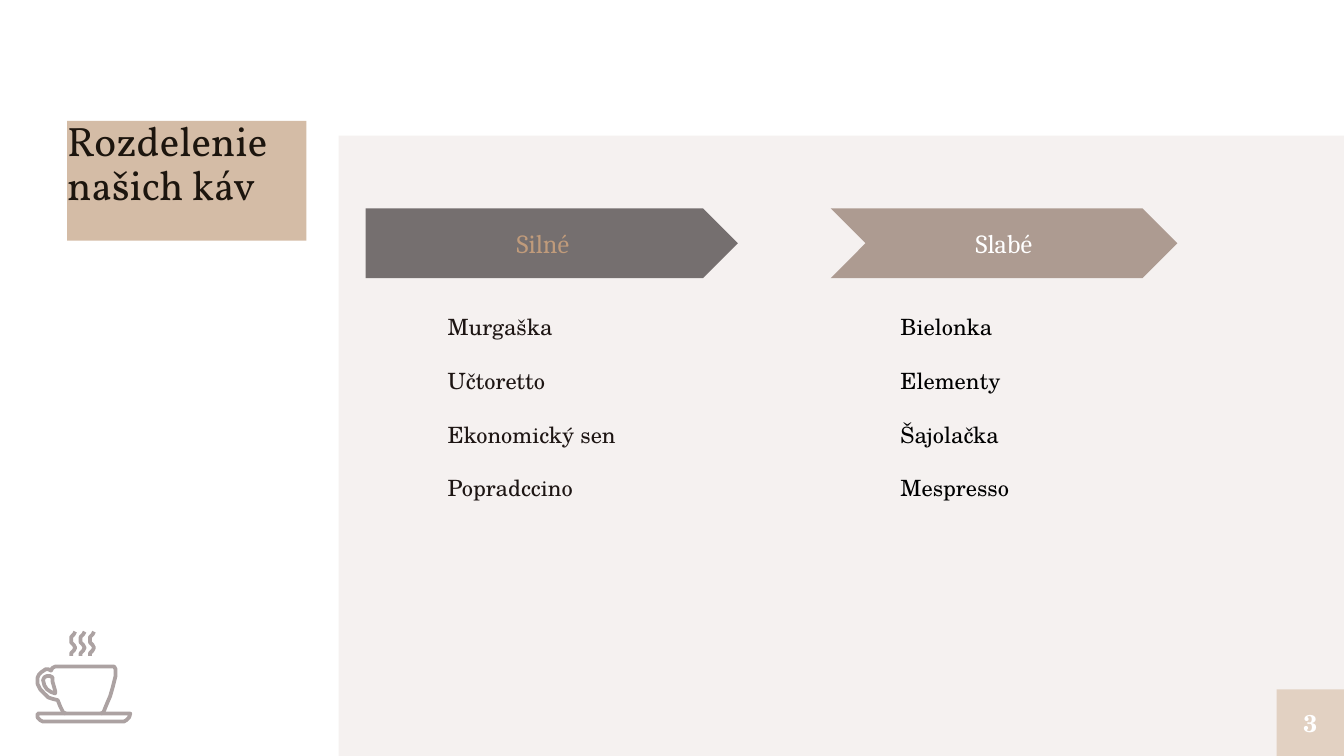
from pptx import Presentation
from pptx.dml.color import RGBColor
from pptx.enum.shapes import MSO_SHAPE
from pptx.enum.text import MSO_ANCHOR, MSO_AUTO_SIZE, PP_ALIGN
from pptx.oxml.ns import qn
from pptx.util import Inches, Pt
from lxml import etree

RECT, PENTAGON, CHEVRON = MSO_SHAPE.RECTANGLE, MSO_SHAPE.PENTAGON, MSO_SHAPE.CHEVRON
TOP, MIDDLE = MSO_ANCHOR.TOP, MSO_ANCHOR.MIDDLE
LEFT, CENTER = PP_ALIGN.LEFT, PP_ALIGN.CENTER
NO_FIT = MSO_AUTO_SIZE.NONE

WHITE = RGBColor(0xFF, 0xFF, 0xFF)
BLACK = RGBColor(0x00, 0x00, 0x00)
INK = RGBColor(0x1C, 0x15, 0x0E)
BROWN_INK = RGBColor(0x1D, 0x15, 0x13)
PANEL = RGBColor(0xF5, 0xF1, 0xF0)
TAN = RGBColor(0xD4, 0xBC, 0xA6)
SAND = RGBColor(0xE2, 0xD1, 0xC2)
GREY = RGBColor(0x75, 0x6F, 0x6F)
TAUPE = RGBColor(0xAD, 0x9B, 0x91)
CARAMEL = RGBColor(0xC0, 0x9B, 0x7B)
OUTLINE = RGBColor(0xAC, 0xA2, 0xA2)

TITLE_FONT, LABEL_FONT, BODY_FONT = "Vollkorn", "Cambria", "TeX Gyre Schola"

CUP = [(75, 531), (77, 530), (79, 525), (82, 518), (84, 511), (86, 503), (86, 498),
       (85, 496), (84, 496), (41, 496), (39, 497), (38, 499), (36, 498), (34, 498),
       (31, 500), (29, 502), (28, 504), (28, 509), (30, 513), (33, 516), (36, 519),
       (39, 520), (43, 521), (45, 526), (47, 530), (49, 531)]
HANDLE = [(32, 506), (33, 504), (35, 503), (37, 503), (39, 504), (39, 507), (41, 514),
          (41, 516), (38, 515), (35, 513), (33, 510), (32, 506)]
SAUCER = [(28, 531), (97, 531), (96, 534), (94, 536), (92, 537), (32, 537),
          (30, 536), (28, 534), (28, 531)]
STEAM = [(3, 470), (2, 472), (0, 474), (0, 478), (2, 480), (3, 482), (2, 484),
         (0, 486), (0, 488)]


class SlideBuilder:
    """Draws styled elements on the current slide."""

    def __init__(self, prs):
        self.s = prs.slides.add_slide(prs.slide_layouts[3])

    def font(self, p, name, size, color, bold=False):
        p.font.name, p.font.size, p.font.bold = name, Pt(size), bold
        p.font.color.rgb = color

    def frame(self, sp, box, inset, anchor):
        sp.left, sp.top, sp.width, sp.height = (Inches(v) for v in box)
        tf = sp.text_frame
        tf.word_wrap, tf.auto_size, tf.vertical_anchor = True, NO_FIT, anchor
        tf.margin_left = tf.margin_top = tf.margin_right = tf.margin_bottom = Inches(inset)
        return tf

    def title(self, text, box):
        sp = self.s.shapes.title
        sp.fill.solid()
        sp.fill.fore_color.rgb = TAN
        tf = self.frame(sp, box, 0, TOP)
        tf.text = text
        p = tf.paragraphs[0]
        p.alignment, p.line_spacing = LEFT, 0.9
        self.font(p, TITLE_FONT, 22, INK)

    def items(self, idx, lines, box, color):
        tf = self.frame(self.s.placeholders[idx], box, 0.1, TOP)
        tf.text = "\n".join(lines)
        for p in tf.paragraphs:
            p.alignment, p.space_before, p.space_after = LEFT, Pt(0), Pt(14.4)
            self.font(p, BODY_FONT, 12, color)
            pPr = p._p.get_or_add_pPr()
            pPr.set("marL", "0")
            pPr.set("indent", "0")
            pPr.insert_element_before(etree.Element(qn("a:buNone")), "a:tabLst", "a:defRPr")

    def block(self, kind, box, fill):
        sp = self.s.shapes.add_shape(kind, *(Inches(v) for v in box))
        sp.shadow.inherit = False
        sp.fill.solid()
        sp.fill.fore_color.rgb = fill
        sp.line.fill.background()
        return sp

    def panel(self, box):
        sp = self.block(RECT, box, PANEL)
        self.s.shapes._spTree.insert(2, sp._element)

    def label(self, kind, text, box, fill, font, size, color, inset=0.1, bold=False):
        tf = self.frame(self.block(kind, box, fill), box, inset, MIDDLE)
        tf.text = text
        p = tf.paragraphs[0]
        p.alignment = CENTER
        self.font(p, font, size, color, bold)

    def stroke(self, points, close=False):
        fb = self.s.shapes.build_freeform(*points[0], scale=Inches(0.01))
        fb.add_line_segments(points[1:], close=close)
        sp = fb.convert_to_shape()
        sp.shadow.inherit = False
        sp.fill.background()
        sp.line.color.rgb, sp.line.width = OUTLINE, Pt(2)
        etree.SubElement(sp.line._get_or_add_ln(), qn("a:round"))


def main():
    prs = Presentation()
    prs.slide_width, prs.slide_height = Inches(10), Inches(10) * 9 // 16
    b = SlideBuilder(prs)

    b.panel((2.52, 1.01, 7.48, 4.62))
    b.title("Rozdelenie našich káv", (0.5, 0.9, 1.78, 0.89))
    b.label(RECT, "3", (9.5, 5.13, 0.5, 0.5), SAND, BODY_FONT, 13, WHITE, 0, True)

    b.label(PENTAGON, "Silné", (2.72, 1.55, 2.77, 0.52), GREY, LABEL_FONT, 14, CARAMEL)
    b.items(1, ["Murgaška", "Učtoretto", "Ekonomický sen", "Popradccino"],
            (3.23, 2.23, 1.75, 2.04), BROWN_INK)
    b.label(CHEVRON, "Slabé", (6.18, 1.55, 2.58, 0.52), TAUPE, LABEL_FONT, 14, WHITE)
    b.items(2, ["Bielonka", "Elementy", "Šajolačka", "Mespresso"],
            (6.6, 2.23, 1.75, 2.04), BLACK)

    b.stroke(CUP)
    b.stroke(HANDLE)
    b.stroke(SAUCER, close=True)
    for left in (53, 60, 67):
        b.stroke([(left + x, y) for x, y in STEAM])

    prs.save("out.pptx")


if __name__ == "__main__":
    main()
